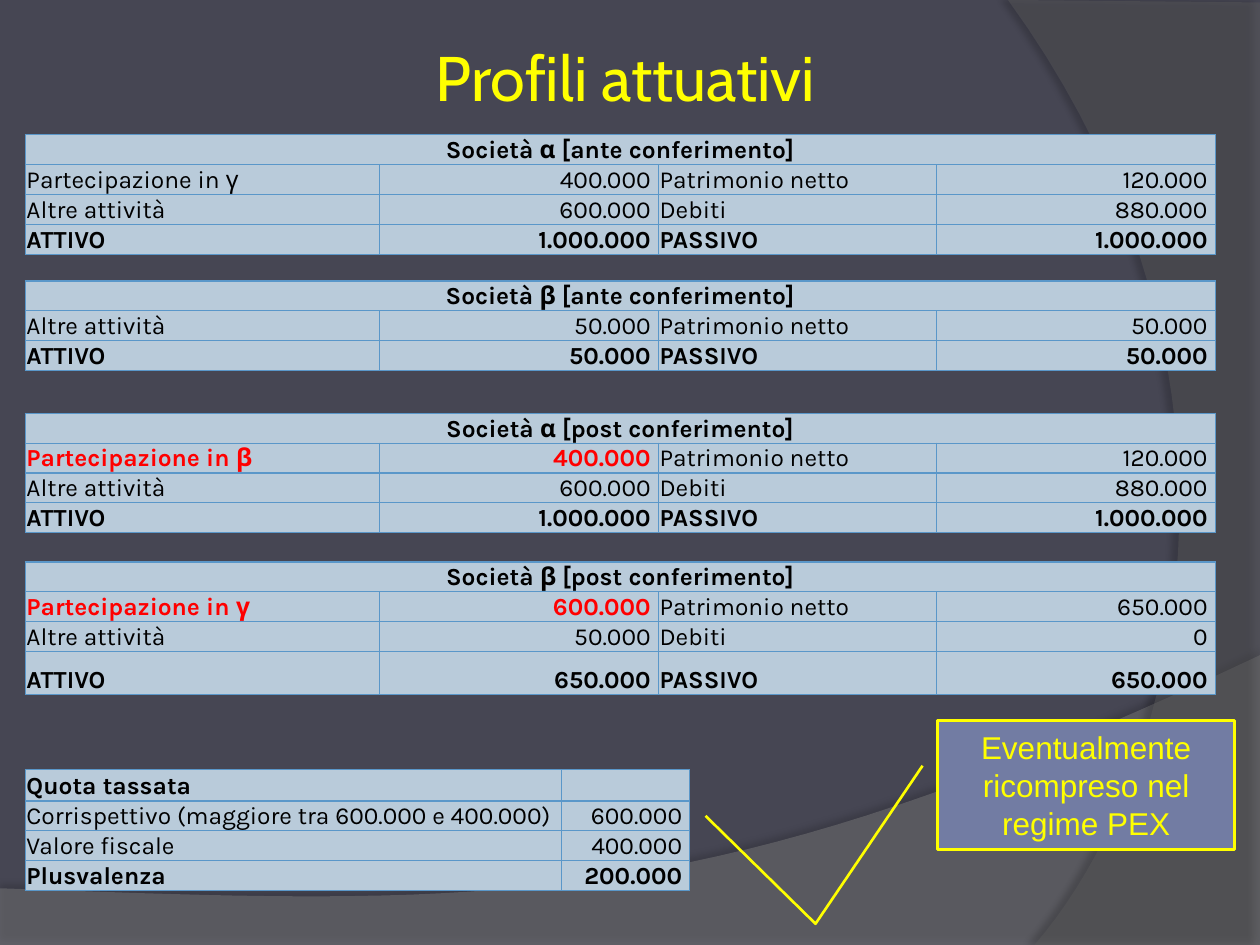
from dataclasses import dataclass

from lxml import etree
from pptx import Presentation
from pptx.dml.color import RGBColor
from pptx.enum.shapes import MSO_SHAPE
from pptx.enum.text import MSO_ANCHOR, MSO_AUTO_SIZE, PP_ALIGN
from pptx.oxml.ns import qn
from pptx.util import Emu, Inches, Pt

LEFT, CENTER, RIGHT = PP_ALIGN.LEFT, PP_ALIGN.CENTER, PP_ALIGN.RIGHT
MIDDLE, BOTTOM = MSO_ANCHOR.MIDDLE, MSO_ANCHOR.BOTTOM
CALLOUT = MSO_SHAPE.LINE_CALLOUT_2
TITLE_ONLY = 5

# The slide is a grid of square cells, ten to the inch.
COLUMNS, ROWS = 100, 75
CELL = Inches(0.1)
TABLE_LEFT = 2
BALANCE_COLUMNS = (28.15, 22.1, 22.1, 22.1)
TAX_COLUMNS = (42.55, 10.2)
ROW_HEIGHT = 2
CURVE_STEPS = 40


@dataclass(frozen=True)
class Theme:
    background: str = "464653"
    wave: str = "7F7F7F"
    arc: str = "5E5E5E"
    shadow: str = "000000"
    accent: str = "FFFF00"
    callout: str = "727CA3"
    cell: str = "B9CBDA"
    border: str = "5A97C9"
    ink: str = "000000"
    alert: str = "FF0000"
    title_font: str = "Cabin"
    table_font: str = "Karla"
    callout_font: str = "Arial"
    title_size: int = 36
    table_size: int = 14
    callout_size: int = 18


@dataclass(frozen=True)
class Balance:
    top: float
    heading: str
    entries: tuple
    highlight: bool = False
    total_height: float = ROW_HEIGHT


@dataclass(frozen=True)
class Backdrop:
    """Straight corners, then a curve from the last corner back to the first."""
    corners: tuple
    controls: tuple
    color: str
    opacity: int
    shadow_opacity: int
    shadow_distance: float
    shadow_angle: int


THEME = Theme()

BACKDROPS = (
    Backdrop(((0, 70.5), (0, 75), (100, 75), (100, 52)),
             ((55.9, 72.9), (39.1, 71.9)), THEME.wave, 45, 35, 3.5, 270),
    Backdrop(((80, 0), (100, 0.2), (100, 75), (82.1, 75)),
             ((93.5, 61.9), (101.8, 30)), THEME.arc, 40, 45, 4, 180),
)

ALPHA_TOTAL = ("ATTIVO", "1.000.000", "PASSIVO", "1.000.000")
ALPHA_OTHER = ("Altre attività", "600.000", "Debiti", "880.000")

BALANCES = (
    Balance(10.7, "Società α [ante conferimento]", (
        ("Partecipazione in γ", "400.000", "Patrimonio netto", "120.000"),
        ALPHA_OTHER, ALPHA_TOTAL)),
    Balance(22.3, "Società β [ante conferimento]", (
        ("Altre attività", "50.000", "Patrimonio netto", "50.000"),
        ("ATTIVO", "50.000", "PASSIVO", "50.000"))),
    Balance(32.8, "Società α [post conferimento]", (
        ("Partecipazione in β", "400.000", "Patrimonio netto", "120.000"),
        ALPHA_OTHER, ALPHA_TOTAL), highlight=True),
    Balance(44.6, "Società β [post conferimento]", (
        ("Partecipazione in γ", "600.000", "Patrimonio netto", "650.000"),
        ("Altre attività", "50.000", "Debiti", "0"),
        ("ATTIVO", "650.000", "PASSIVO", "650.000")),
        highlight=True, total_height=3.4),
)

TAX_TOP = 61.1
TAXED_SHARE = (
    ("Quota tassata", ""),
    ("Corrispettivo (maggiore tra 600.000 e 400.000)", "600.000"),
    ("Valore fiscale", "400.000"),
    ("Plusvalenza", "200.000"),
)


def grid(cells: float) -> Emu:
    return Emu(round(cells * CELL))


def rgb(color: str) -> RGBColor:
    return RGBColor.from_string(color)


def sub(parent, tag: str, **attributes):
    return etree.SubElement(parent, qn(tag), {k: str(v) for k, v in attributes.items()})


def write(frame, text: str, *, font: str, size: int, color: str, bold: bool = False,
          align=LEFT, anchor=MIDDLE) -> None:
    frame.word_wrap = True
    frame.vertical_anchor = anchor
    paragraph = frame.paragraphs[0]
    paragraph.alignment = align
    if not text:
        sub(paragraph._p, "a:endParaRPr", sz=size * 100)
        return
    run = paragraph.add_run()
    run.text = text
    run.font.name, run.font.size, run.font.bold = font, Pt(size), bold
    run.font.color.rgb = rgb(color)


def add_backdrop(slide, part: Backdrop) -> None:
    start, end = part.corners[-1], part.corners[0]
    curve = []
    for step in range(1, CURVE_STEPS):
        t = step / CURVE_STEPS
        weights = ((1 - t) ** 3, 3 * t * (1 - t) ** 2, 3 * t * t * (1 - t), t ** 3)
        points = (start, *part.controls, end)
        curve.append(tuple(sum(w * p[axis] for w, p in zip(weights, points))
                           for axis in (0, 1)))
    outline = [(grid(x), grid(y)) for x, y in (*part.corners, *curve)]
    builder = slide.shapes.build_freeform(*outline[0])
    builder.add_line_segments(outline[1:], close=True)
    shape = builder.convert_to_shape()
    shape.line.fill.background()
    shape.fill.solid()
    shape.fill.fore_color.rgb = rgb(part.color)
    properties = shape.element.spPr
    fill_color = properties.find(qn("a:solidFill")).find(qn("a:srgbClr"))
    sub(fill_color, "a:alpha", val=part.opacity * 1000)
    shadow = sub(sub(properties, "a:effectLst"), "a:outerShdw", blurRad=Pt(4),
                 dist=Pt(part.shadow_distance), dir=part.shadow_angle * 60000,
                 algn="ctr", rotWithShape=0)
    sub(sub(shadow, "a:srgbClr", val=THEME.shadow), "a:alpha",
        val=part.shadow_opacity * 1000)


def format_cell(cell) -> None:
    cell.margin_left = cell.margin_top = Inches(0.01)
    cell.margin_bottom = 0
    properties = cell._tc.get_or_add_tcPr()
    for side in ("a:lnL", "a:lnR", "a:lnT", "a:lnB"):
        line = sub(properties, side, w=Pt(0.75))
        sub(sub(line, "a:solidFill"), "a:srgbClr", val=THEME.border)
    cell.fill.solid()
    cell.fill.fore_color.rgb = rgb(THEME.cell)


def add_ledger(slide, top: float, widths: tuple, rows: tuple, *,
               spanned: bool = False, highlight: bool = False,
               total_height: float = ROW_HEIGHT) -> None:
    """Table of label and amount pairs with a bold first and last row."""
    heights = [ROW_HEIGHT] * (len(rows) - 1) + [total_height]
    table = slide.shapes.add_table(
        len(rows), len(widths), grid(TABLE_LEFT), grid(top),
        grid(sum(widths)), grid(sum(heights))).table
    table.first_row = table.horz_banding = False
    for column, width in zip(table.columns, widths):
        column.width = grid(width)
    for row, height in zip(table.rows, heights):
        row.height = grid(height)
    for cell in table.iter_cells():
        format_cell(cell)
    if spanned:
        table.cell(0, 0).merge(table.cell(0, len(widths) - 1))
    for r, texts in enumerate(rows):
        for c, text in enumerate(texts):
            cell = table.cell(r, c)
            alert = highlight and r == 1 and c < 2
            amount = c % 2 == 1
            heading = spanned and r == 0
            cell.margin_right = Inches(0.06 if amount else 0.01)
            write(cell.text_frame, text, font=THEME.table_font, size=THEME.table_size,
                  color=THEME.alert if alert else THEME.ink,
                  bold=alert or r in (0, len(rows) - 1),
                  align=CENTER if heading else RIGHT if amount else LEFT)
            cell.vertical_anchor = BOTTOM


def add_title(slide) -> None:
    title = slide.shapes.title
    title.left, title.top = grid(2), grid(2.9)
    title.width, title.height = grid(95.3), grid(6.3)
    frame = title.text_frame
    frame.auto_size = MSO_AUTO_SIZE.NONE
    frame.margin_left = frame.margin_right = Inches(0.05)
    frame.margin_top = frame.margin_bottom = Inches(0.05)
    write(frame, "Profili attuativi", font=THEME.title_font, size=THEME.title_size,
          color=THEME.accent, align=CENTER)
    title.element.getparent().append(title.element)


def add_callout(slide) -> None:
    callout = slide.shapes.add_shape(CALLOUT, grid(74.4), grid(57.2), grid(23.6), grid(10.2))
    for index, share in enumerate((0.35, -0.05, 1.58, -0.41, 0.74, -0.78)):
        callout.adjustments[index] = share
    callout.shadow.inherit = False
    callout.fill.solid()
    callout.fill.fore_color.rgb = rgb(THEME.callout)
    callout.line.color.rgb = rgb(THEME.accent)
    callout.line.width = Pt(1.5)
    write(callout.text_frame, "Eventualmente ricompreso nel regime PEX",
          font=THEME.callout_font, size=THEME.callout_size, color=THEME.accent, align=CENTER)


def main() -> None:
    deck = Presentation()
    deck.slide_width, deck.slide_height = grid(COLUMNS), grid(ROWS)
    slide = deck.slides.add_slide(deck.slide_layouts[TITLE_ONLY])
    slide.background.fill.solid()
    slide.background.fill.fore_color.rgb = rgb(THEME.background)
    for part in BACKDROPS:
        add_backdrop(slide, part)
    add_title(slide)
    for balance in BALANCES:
        add_ledger(slide, balance.top, BALANCE_COLUMNS,
                   ((balance.heading,), *balance.entries), spanned=True,
                   highlight=balance.highlight, total_height=balance.total_height)
    add_ledger(slide, TAX_TOP, TAX_COLUMNS, TAXED_SHARE)
    add_callout(slide)
    deck.save("out.pptx")


if __name__ == "__main__":
    main()
